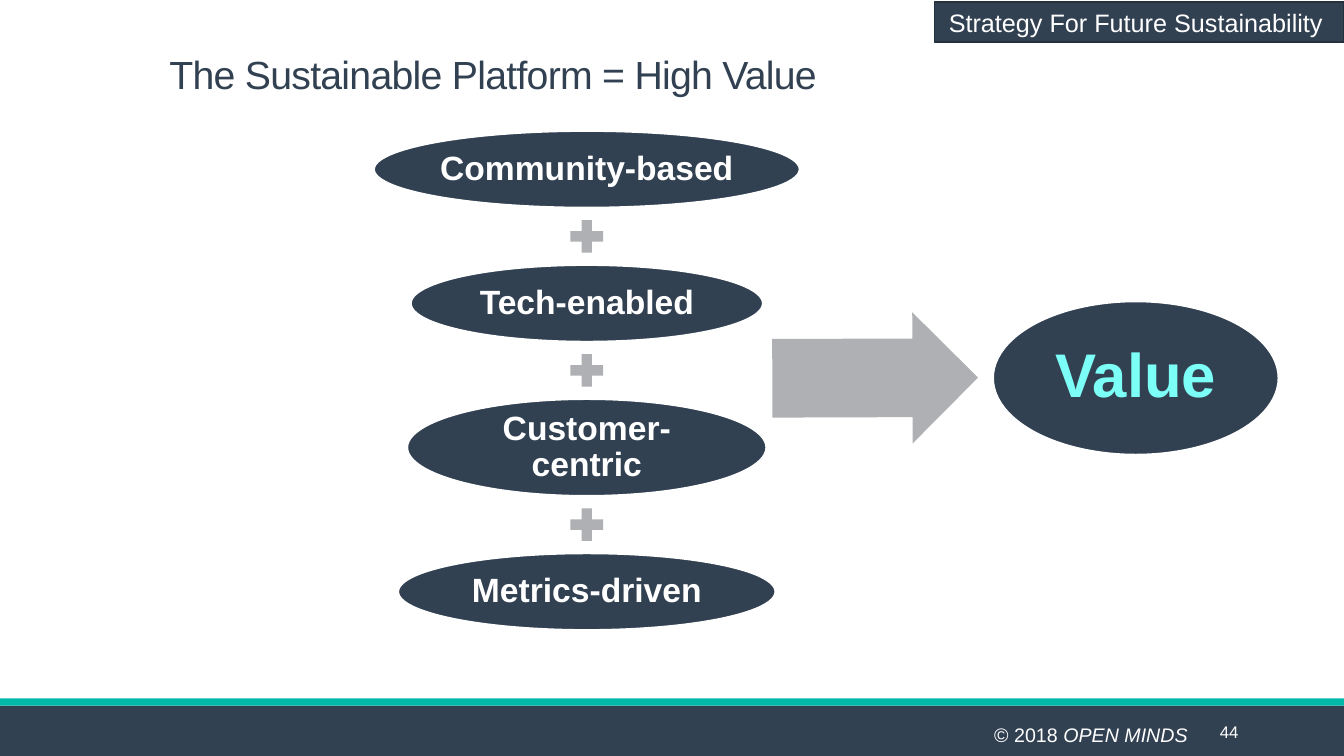
import pptx
import pptx.dml.color
import pptx.enum.shapes
import pptx.enum.text
import pptx.util

RGBColor = pptx.dml.color.RGBColor
SHAPE = pptx.enum.shapes.MSO_SHAPE
ANCHOR = pptx.enum.text.MSO_ANCHOR
ALIGN = pptx.enum.text.PP_ALIGN

NAVY = RGBColor(0x32, 0x41, 0x52)
DARK_NAVY = RGBColor(0x25, 0x30, 0x3D)
TEAL = RGBColor(0x00, 0xB7, 0xAA)
AQUA = RGBColor(0x7C, 0xFF, 0xF6)
GREY = RGBColor(0xAE, 0xB0, 0xB3)
WHITE = RGBColor(0xFF, 0xFF, 0xFF)

# Grid of square cells covering the slide
COLUMNS, ROWS = 13.33, 7.5
CELL = pptx.util.Inches(1)


def grid(*cells):
    return [pptx.util.Emu(round(cell * CELL)) for cell in cells]


class ValueSlide:
    font = "Arial"
    outline = pptx.util.Pt(1.25)

    def __init__(self, deck):
        self.slide = deck.slides.add_slide(deck.slide_layouts[5])

    def format_text(self, frame, size, color, bold=None, align=None,
                    anchor=ANCHOR.MIDDLE, spacing=None):
        frame.word_wrap = True
        frame.auto_size = pptx.enum.text.MSO_AUTO_SIZE.NONE
        frame.vertical_anchor = anchor
        paragraph = frame.paragraphs[0]
        paragraph.alignment = align
        paragraph.line_spacing = spacing
        for run in paragraph.runs:
            run.font.name = self.font
            run.font.size = pptx.util.Pt(size)
            run.font.bold = bold
            run.font.color.rgb = color

    def title(self, text, place):
        heading = self.slide.shapes.title
        heading.left, heading.top, heading.width, heading.height = grid(*place)
        heading.text_frame.text = text
        self.format_text(heading.text_frame, 28, NAVY, align=ALIGN.LEFT,
                         anchor=ANCHOR.BOTTOM, spacing=0.85)
        run = heading.text_frame.paragraphs[0].runs[0]
        run.font._element.set("spc", "-50")

    def shape(self, preset, place, fill, line=None):
        drawn = self.slide.shapes.add_shape(preset, *grid(*place))
        drawn.shadow.inherit = False
        drawn.fill.solid()
        drawn.fill.fore_color.rgb = fill
        if line is None:
            drawn.line.fill.background()
        else:
            drawn.line.color.rgb = line
            drawn.line.width = self.outline
        return drawn

    def ellipse(self, text, place, size, color, inset):
        oval = self.shape(SHAPE.OVAL, place, NAVY, WHITE)
        frame = oval.text_frame
        frame.margin_left, frame.margin_top, frame.margin_right, frame.margin_bottom = grid(*[inset] * 4)
        frame.text = text
        self.format_text(frame, size, color, True, ALIGN.CENTER, spacing=0.9)

    def label(self, texts, place, size, align=None, anchor=ANCHOR.MIDDLE):
        frame = self.slide.shapes.add_textbox(*grid(*place)).text_frame
        for text in texts:
            frame.paragraphs[0].add_run().text = text
        self.format_text(frame, size, WHITE, align=align, anchor=anchor)
        return frame.paragraphs[0].runs


def main():
    deck = pptx.Presentation()
    deck.slide_width, deck.slide_height = grid(COLUMNS, ROWS)
    page = ValueSlide(deck)

    # Footer
    page.shape(SHAPE.RECTANGLE, (0, 7, COLUMNS, 0.5), NAVY)
    page.shape(SHAPE.RECTANGLE, (0, 6.93, COLUMNS, 0.07), TEAL)
    copyright_runs = page.label(["© 2018 ", "OPEN MINDS"], (1.2, 7.12, 10.68, 0.32),
                                14, ALIGN.RIGHT, ANCHOR.TOP)
    copyright_runs[1].font.italic = True
    page.label(["44"], (12, 7.06, 1.33, 0.4), 12)

    # Title
    page.title("The Sustainable Platform = High Value", (1.58, 0.25, 9.75, 0.77))

    # Platform traits, stacked with a plus sign in each gap
    traits = [
        ("Community-based", 4.22, 0.76),
        ("Tech-enabled", 3.49, 0.76),
        ("Customer-centric", 3.56, 0.96),
        ("Metrics-driven", 3.74, 0.76),
    ]
    center, top, gap, plus = 5.82, 1.3, 0.57, 0.44
    for index, (trait, width, height) in enumerate(traits):
        if index:
            page.shape(SHAPE.MATH_PLUS,
                       (center - plus / 2, top - (gap + plus) / 2, plus, plus), GREY)
        page.ellipse(trait, (center - width / 2, top, width, height), 24, WHITE, 0.02)
        top += height + gap

    # Arrow to the resulting value
    arrow = page.shape(SHAPE.RIGHT_ARROW, (7.66, 3.1, 2.04, 1.3), GREY)
    arrow.adjustments[0] = 0.6
    arrow.adjustments[1] = 0.5
    arrow.rotation = 359.8
    page.ellipse("Value", (9.85, 2.99, 2.83, 1.52), 44, AQUA, 0.06)

    # Section banner
    banner = page.shape(SHAPE.RECTANGLE, (9.27, 0.02, 4.06, 0.4), NAVY, DARK_NAVY)
    banner.text_frame.text = "Strategy For Future Sustainability "
    page.format_text(banner.text_frame, 18, WHITE, align=ALIGN.CENTER)

    deck.save("out.pptx")


if __name__ == "__main__":
    main()
